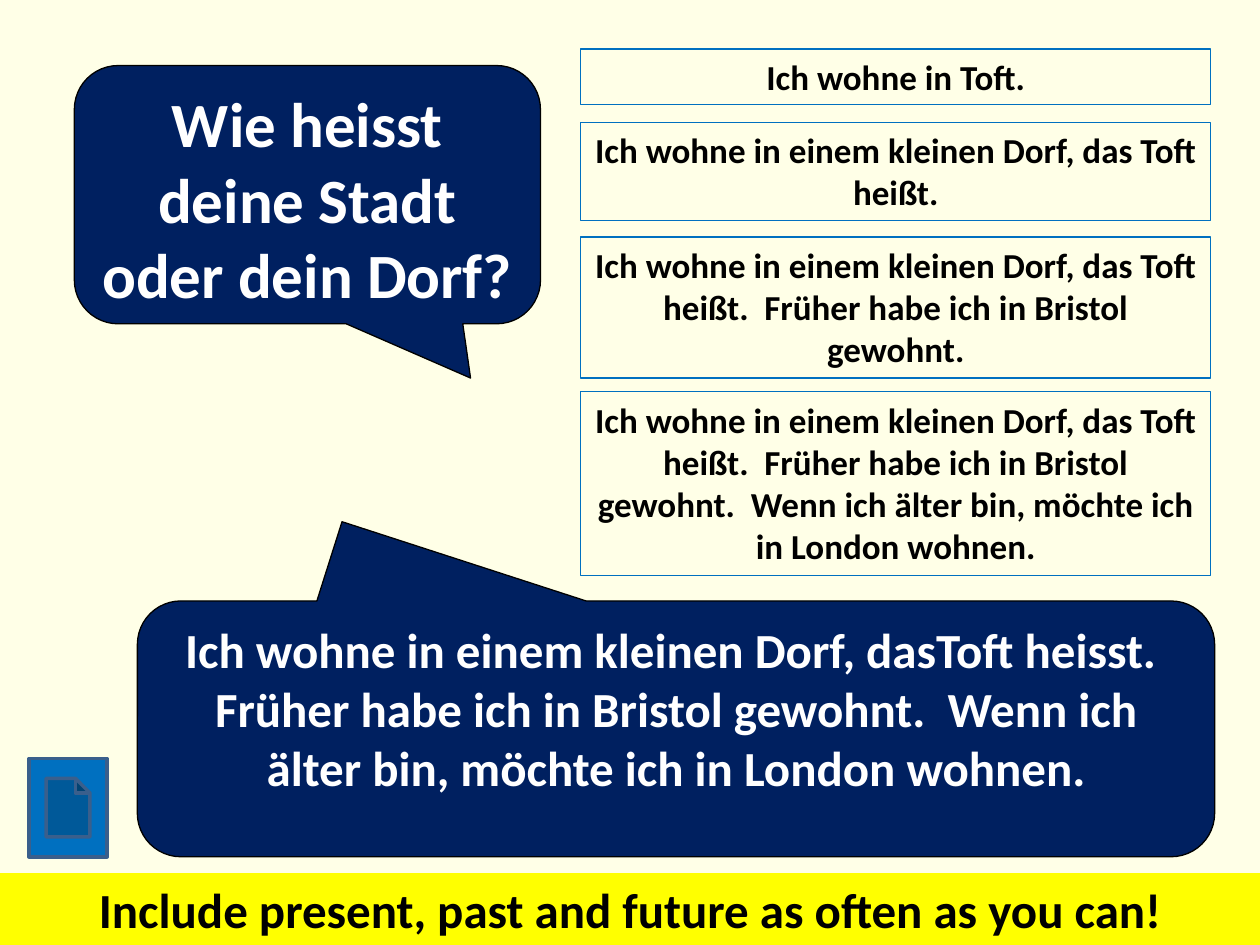
from dataclasses import dataclass
from itertools import accumulate
from typing import Optional

from pptx import Presentation
from pptx.dml.color import RGBColor
from pptx.enum.shapes import MSO_SHAPE as Shape
from pptx.enum.text import MSO_ANCHOR as Anchor, MSO_AUTO_SIZE as AutoSize, PP_ALIGN as Align
from pptx.util import Inches, Pt


@dataclass(frozen=True)
class Theme:
    font: str = "Calibri"
    cream: str = "FFFFE7"
    navy: str = "002060"
    blue: str = "0070C0"
    slate: str = "3A5F8C"
    yellow: str = "FFFF00"
    black: str = "000000"
    white: str = "FFFFFF"
    question_size: int = 36
    speech_size: int = 28
    answer_size: int = 20


@dataclass(frozen=True)
class Panel:
    left: float
    top: float
    width: float
    height: float
    words: str = ""
    size: int = 0
    ink: str = "000000"
    kind: Shape = Shape.RECTANGLE
    fill: Optional[str] = None
    line: Optional[str] = None
    line_width: float = 0.75
    adjustments: tuple[float, ...] = ()
    grow: bool = False


THEME = Theme()
ANSWER_TOPS = (0.39, 0.97, 1.88, 3.11)
LINE_HEIGHT = 0.34
TEXT_MARGINS = 0.1
SENTENCES = (
    "Ich wohne in einem kleinen Dorf, das Toft heißt.",
    "Früher habe ich in Bristol gewohnt.",
    "Wenn ich älter bin, möchte ich in London wohnen.",
)


def write_words(shape, panel: Panel) -> None:
    frame = shape.text_frame
    frame_format = {
        "word_wrap": True,
        "vertical_anchor": Anchor.TOP,
        "auto_size": AutoSize.SHAPE_TO_FIT_TEXT if panel.grow else AutoSize.NONE,
    }
    for name, value in frame_format.items():
        setattr(frame, name, value)
    paragraph = frame.paragraphs[0]
    paragraph.alignment = Align.CENTER
    run = paragraph.add_run()
    run.text = panel.words
    font_format = {"name": THEME.font, "size": Pt(panel.size), "bold": True}
    for name, value in font_format.items():
        setattr(run.font, name, value)
    run.font.color.rgb = RGBColor.from_string(panel.ink)


def draw_panel(slide, panel: Panel) -> None:
    box = map(Inches, (panel.left, panel.top, panel.width, panel.height))
    shape = slide.shapes.add_shape(panel.kind, *box)
    shape.shadow.inherit = False
    for index, value in enumerate(panel.adjustments):
        shape.adjustments[index] = value
    if panel.fill:
        shape.fill.solid()
        shape.fill.fore_color.rgb = RGBColor.from_string(panel.fill)
    else:
        shape.fill.background()
    if panel.line:
        shape.line.color.rgb = RGBColor.from_string(panel.line)
        shape.line.width = Pt(panel.line_width)
    else:
        shape.line.fill.background()
    if panel.words:
        write_words(shape, panel)


def callout(left: float, top: float, width: float, height: float,
            words: str, size: int, tip: tuple[float, float]) -> Panel:
    """Speech bubble; tip is the pointer's offset from the centre, as shares of the size."""
    return Panel(left, top, width, height, words, size, THEME.white,
                 Shape.ROUNDED_RECTANGULAR_CALLOUT, THEME.navy, THEME.black,
                 adjustments=(*tip, 0.17))


def answer_panels() -> list[Panel]:
    """Model answers, each one line longer than the one before."""
    answers = ["Ich wohne in Toft.", *accumulate(SENTENCES, "{}  {}".format)]
    return [
        Panel(4.61, top, 5, TEXT_MARGINS + lines * LINE_HEIGHT, answer,
              THEME.answer_size, line=THEME.blue, grow=True)
        for lines, (top, answer) in enumerate(zip(ANSWER_TOPS, answers), start=1)
    ]


def main() -> None:
    deck = Presentation()
    deck.slide_width, deck.slide_height = Inches(10), Inches(7.5)
    slide = deck.slides.add_slide(deck.slide_layouts[6])
    slide.background.fill.solid()
    slide.background.fill.fore_color.rgb = RGBColor.from_string(THEME.cream)

    full_reply = "  ".join(("Ich wohne in einem kleinen Dorf, dasToft heisst.", *SENTENCES[1:]))
    panels = [
        callout(0.59, 0.52, 3.7, 2.05, "Wie heisst deine Stadt oder dein Dorf?",
                THEME.question_size, (0.35, 0.71)),
        callout(1.09, 4.77, 8.55, 2.03, full_reply, THEME.speech_size, (-0.31, -0.81)),
        Panel(0, 6.93, 10, 0.57, "Include present, past and future as often as you can!",
              THEME.speech_size, fill=THEME.yellow, grow=True),
        *answer_panels(),
        Panel(0.23, 6.02, 0.62, 0.78, kind=Shape.ACTION_BUTTON_DOCUMENT,
              fill=THEME.blue, line=THEME.slate, line_width=2),
    ]
    for panel in panels:
        draw_panel(slide, panel)
    deck.save("out.pptx")


if __name__ == "__main__":
    main()
